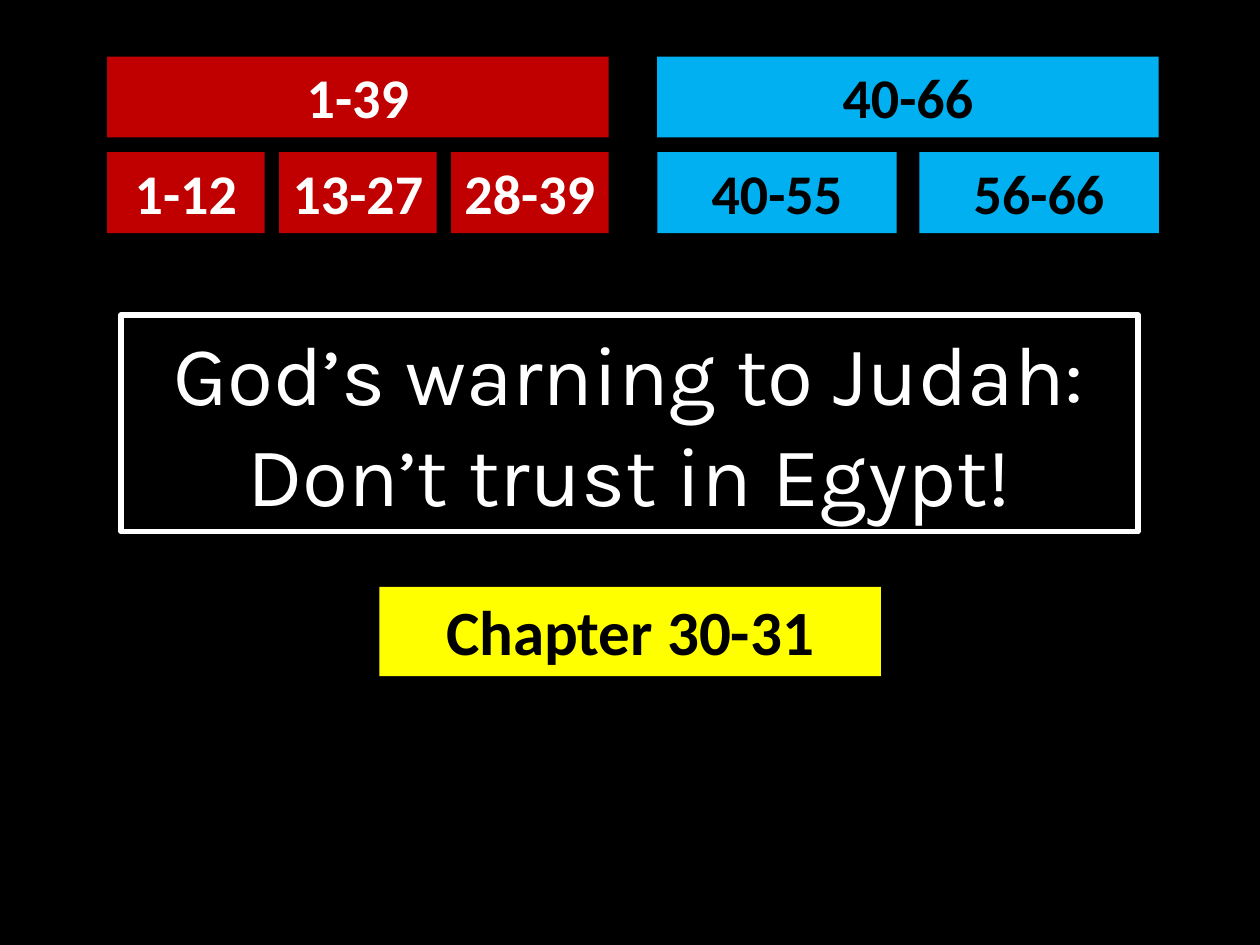
from pptx import Presentation
from pptx.dml.color import RGBColor
from pptx.enum.shapes import MSO_SHAPE as Shape
from pptx.enum.text import MSO_ANCHOR as Anchor, MSO_AUTO_SIZE as AutoSize, PP_ALIGN as Align
from pptx.util import Cm, Pt

BLACK, WHITE, RED, BLUE, YELLOW = "000000", "FFFFFF", "C00000", "00B0F0", "FFFF00"
BAR_H = 1.63
ROW_GAP = 0.3


def paint(fill, color):
    fill.solid()
    fill.fore_color.rgb = RGBColor.from_string(color)


def write(sp, text, *, size, color, font="Calibri", bold=False):
    tf = sp.text_frame
    tf.word_wrap = True
    tf.auto_size = AutoSize.SHAPE_TO_FIT_TEXT
    tf.vertical_anchor = Anchor.TOP
    p = tf.paragraphs[0]
    p.alignment = Align.CENTER
    r = p.add_run()
    r.text = text
    r.font.name, r.font.size, r.font.bold = font, Pt(size), bold
    r.font.color.rgb = RGBColor.from_string(color)


def add_bar(slide, box, text, *, fill, color, size=32):
    sp = slide.shapes.add_shape(Shape.RECTANGLE, *map(Cm, box))
    sp.shadow.inherit = False
    sp.line.fill.background()
    paint(sp.fill, fill)
    write(sp, text, size=size, color=color, bold=True)


def add_division(slide, left, top, width, whole, parts, *, gap, **colors):
    """A full-width bar of chapters above a row of equal bars for its parts."""
    add_bar(slide, (left, top, width, BAR_H), whole, **colors)
    part_w = (width - gap * (len(parts) - 1)) / len(parts)
    part_top = top + BAR_H + ROW_GAP
    for i, part in enumerate(parts):
        part_left = left + i * (part_w + gap)
        add_bar(slide, (part_left, part_top, part_w, BAR_H), part, **colors)


def place_title(slide, left, top, width, height, text):
    title = slide.shapes.title
    title.left, title.top = Cm(left), Cm(top)
    title.width, title.height = Cm(width), Cm(height)
    paint(title.line.fill, WHITE)
    title.line.width = Pt(3)
    write(title, text, size=48, color=WHITE, font="Karla")


def main():
    prs = Presentation()
    prs.slide_width, prs.slide_height = Cm(25.4), Cm(19.05)
    slide = prs.slides.add_slide(prs.slide_layouts[5])
    paint(slide.background.fill, BLACK)

    add_division(slide, 2.16, 1.14, 10.11, "1-39", ["1-12", "13-27", "28-39"],
                 gap=0.29, fill=RED, color=WHITE)
    add_division(slide, 13.25, 1.14, 10.11, "40-66", ["40-55", "56-66"],
                 gap=0.46, fill=BLUE, color=BLACK)
    place_title(slide, 2.44, 6.35, 20.5, 4.37,
                "God’s warning to Judah: Don’t trust in Egypt!")
    add_bar(slide, (7.65, 11.83, 10.11, 1.8), "Chapter 30-31",
            fill=YELLOW, color=BLACK, size=36)
    prs.save("out.pptx")


if __name__ == "__main__":
    main()
